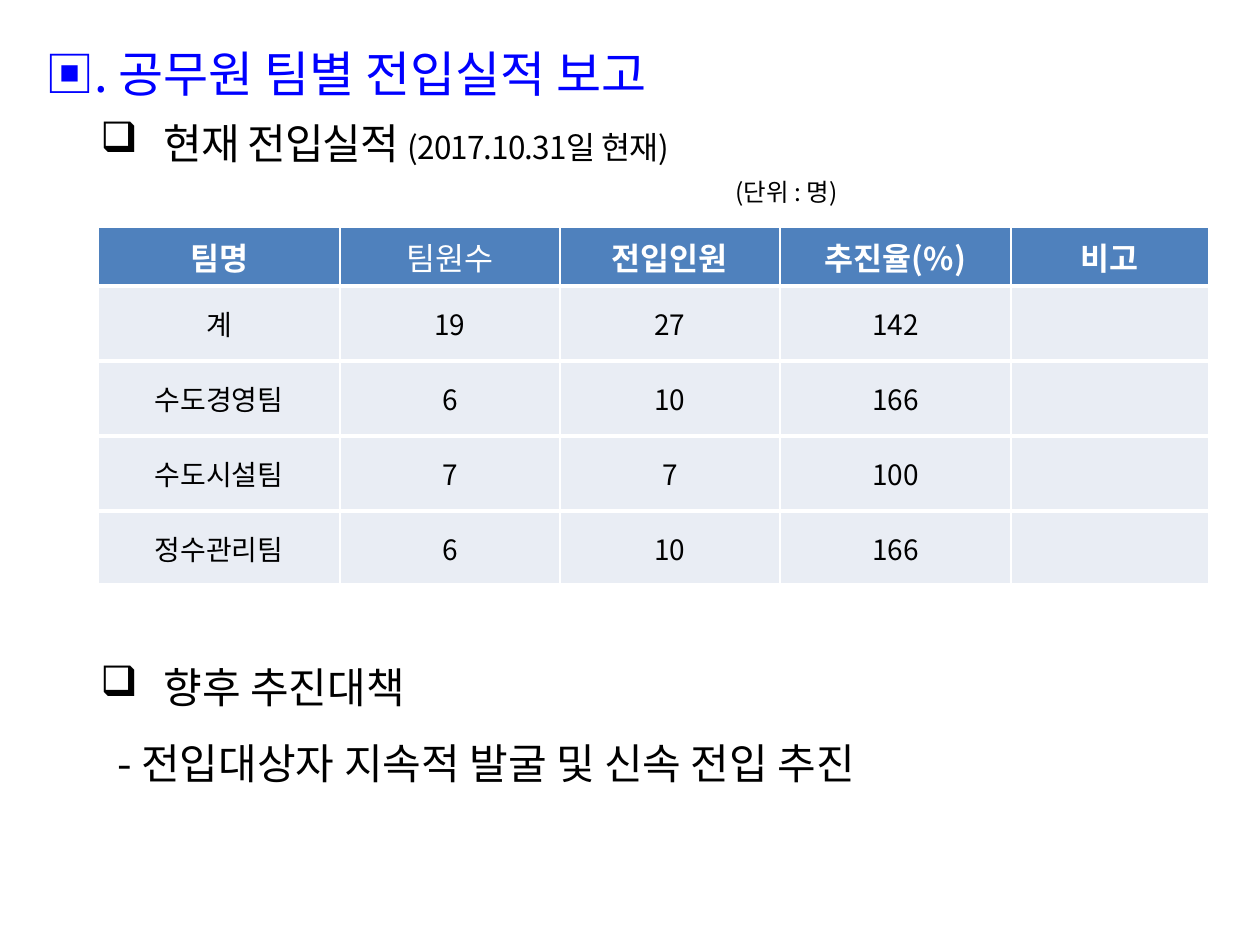
from dataclasses import dataclass

from lxml.etree import SubElement
from pptx import Presentation
from pptx.dml.color import RGBColor as RGB
from pptx.enum.text import MSO_ANCHOR as ANCHOR, PP_ALIGN as ALIGN
from pptx.oxml.ns import qn
from pptx.util import Emu, Pt


@dataclass(frozen=True)
class Theme:
    font: str = "Noto Sans CJK KR"
    blue: str = "0000FF"
    black: str = "000000"
    white: str = "FFFFFF"
    header: str = "4F81BD"
    body: str = "E9EDF4"
    title_size: int = 28
    heading_size: int = 24
    date_size: int = 18
    unit_size: int = 14
    header_size: int = 18
    cell_size: int = 16


T = Theme()

COLUMNS = [242, 220, 220, 231, 198]
HEADER_HEIGHT, ROW_HEIGHT = 59, 75
HEADERS = ["팀명", "팀원수", "전입인원", "추진율(%)", "비고"]
TEAMS = [
    ["계", "19", "27", "142", ""],
    ["수도경영팀", "6", "10", "166", ""],
    ["수도시설팀", "7", "7", "100", ""],
    ["정수관리팀", "6", "10", "166", ""],
]


def px(n):
    return Emu(round(n * 914400 / 126))


def add_run(p, text, size, color=T.black, bold=False, spacing=0):
    r = p.add_run()
    r.text = text
    for name, value in {"name": T.font, "size": Pt(size), "bold": bold}.items():
        setattr(r.font, name, value)
    r.font.color.rgb = RGB.from_string(color)
    rPr = r.font._element
    SubElement(rPr, qn("a:ea"), typeface=T.font)
    if spacing:
        rPr.set("spc", str(spacing))


def add_line(tf, runs, left, hanging=0, bullet=None, **fmt):
    """Add one paragraph; left and hanging are in px, runs are add_run arguments."""
    p = tf.paragraphs[0]
    if p.runs:
        p = tf.add_paragraph()
    for name, value in fmt.items():
        setattr(p, name, value)
    pPr = p._p.get_or_add_pPr()
    pPr.set("marL", str(px(left)))
    pPr.set("indent", str(-px(hanging)))
    if bullet:
        color = SubElement(pPr, qn("a:buClr"))
        SubElement(color, qn("a:srgbClr"), val=T.black)
        SubElement(pPr, qn("a:buChar"), char=bullet)
    else:
        SubElement(pPr, qn("a:buNone"))
    for run in runs:
        add_run(p, **run)


def add_text_frame(s, x, y, w, h):
    tf = s.shapes.add_textbox(px(x), px(y), px(w), px(h)).text_frame
    tf.word_wrap = True
    return tf


def add_heading(s, x, y, w, h):
    tf = add_text_frame(s, x, y, w, h)
    add_line(tf, [dict(text="▣. 공무원 팀별 전입실적 보고", size=T.title_size, color=T.blue)],
             left=71, hanging=63, line_spacing=1.3, space_before=Pt(6))
    add_line(tf, [dict(text="현재 전입실적 ", size=T.heading_size, spacing=-50),
                  dict(text="(2017.10.31일 현재)", size=T.date_size, spacing=-50)],
             left=126, hanging=63, bullet="❑", line_spacing=1.3)
    # Unit note above the right half of the table
    add_line(tf, [dict(text="(단위 : 명)", size=T.unit_size)], left=698, line_spacing=1.3)


def set_borders(cell, top, bottom):
    tcPr = cell._tc.get_or_add_tcPr()
    widths = {"a:lnL": 1, "a:lnR": 1, "a:lnT": top, "a:lnB": bottom}
    for i, (tag, width) in enumerate(widths.items()):
        ln = SubElement(tcPr, qn(tag), w=str(Pt(width)))
        fill = SubElement(ln, qn("a:solidFill"))
        SubElement(fill, qn("a:srgbClr"), val=T.white)
        tcPr.insert(i, ln)  # borders come before the cell fill


def add_team_table(s, x, y):
    rows = [HEADERS] + TEAMS
    heights = [HEADER_HEIGHT] + [ROW_HEIGHT] * len(TEAMS)
    table = s.shapes.add_table(len(rows), len(COLUMNS), px(x), px(y),
                               px(sum(COLUMNS)), px(sum(heights))).table
    table.horz_banding = False
    for column, width in zip(table.columns, COLUMNS):
        column.width = px(width)
    for i, (values, height) in enumerate(zip(rows, heights)):
        table.rows[i].height = px(height)
        is_header = i == 0
        for j, value in enumerate(values):
            cell = table.cell(i, j)
            cell.vertical_anchor = ANCHOR.MIDDLE
            cell.fill.solid()
            cell.fill.fore_color.rgb = RGB.from_string(T.header if is_header else T.body)
            set_borders(cell, top=1 if is_header else 3, bottom=3)
            p = cell.text_frame.paragraphs[0]
            p.alignment = ALIGN.CENTER
            if value:
                add_run(p, value,
                        size=T.header_size if is_header else T.cell_size,
                        color=T.white if is_header else T.black,
                        bold=is_header and value != "팀원수")


def add_plan(s, x, y, w, h):
    tf = add_text_frame(s, x, y, w, h)
    add_line(tf, [dict(text="향후 추진대책", size=T.heading_size)],
             left=126, hanging=63, bullet="❑", line_spacing=1.5)
    add_line(tf, [dict(text="- 전입대상자 지속적 발굴 및 신속 전입 추진", size=T.heading_size)],
             left=80, line_spacing=1.5)


def main():
    prs = Presentation()
    prs.slide_width, prs.slide_height = px(1260), px(945)
    s = prs.slides.add_slide(prs.slide_layouts[6])
    add_heading(s, 25, 20, 1235, 804)
    add_team_table(s, 98, 227)
    add_plan(s, 25, 630, 1206, 260)
    prs.save("out.pptx")


if __name__ == "__main__":
    main()
